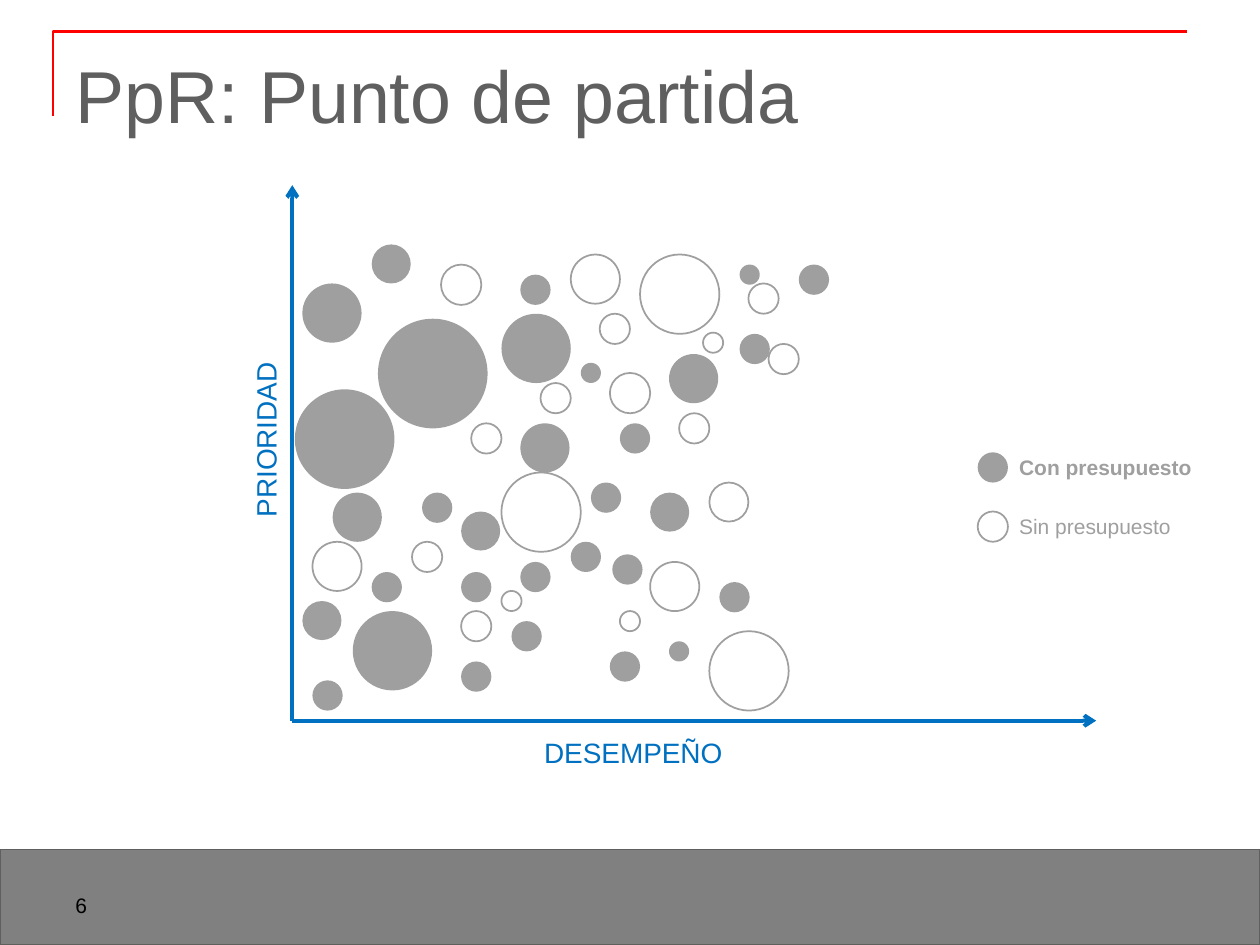
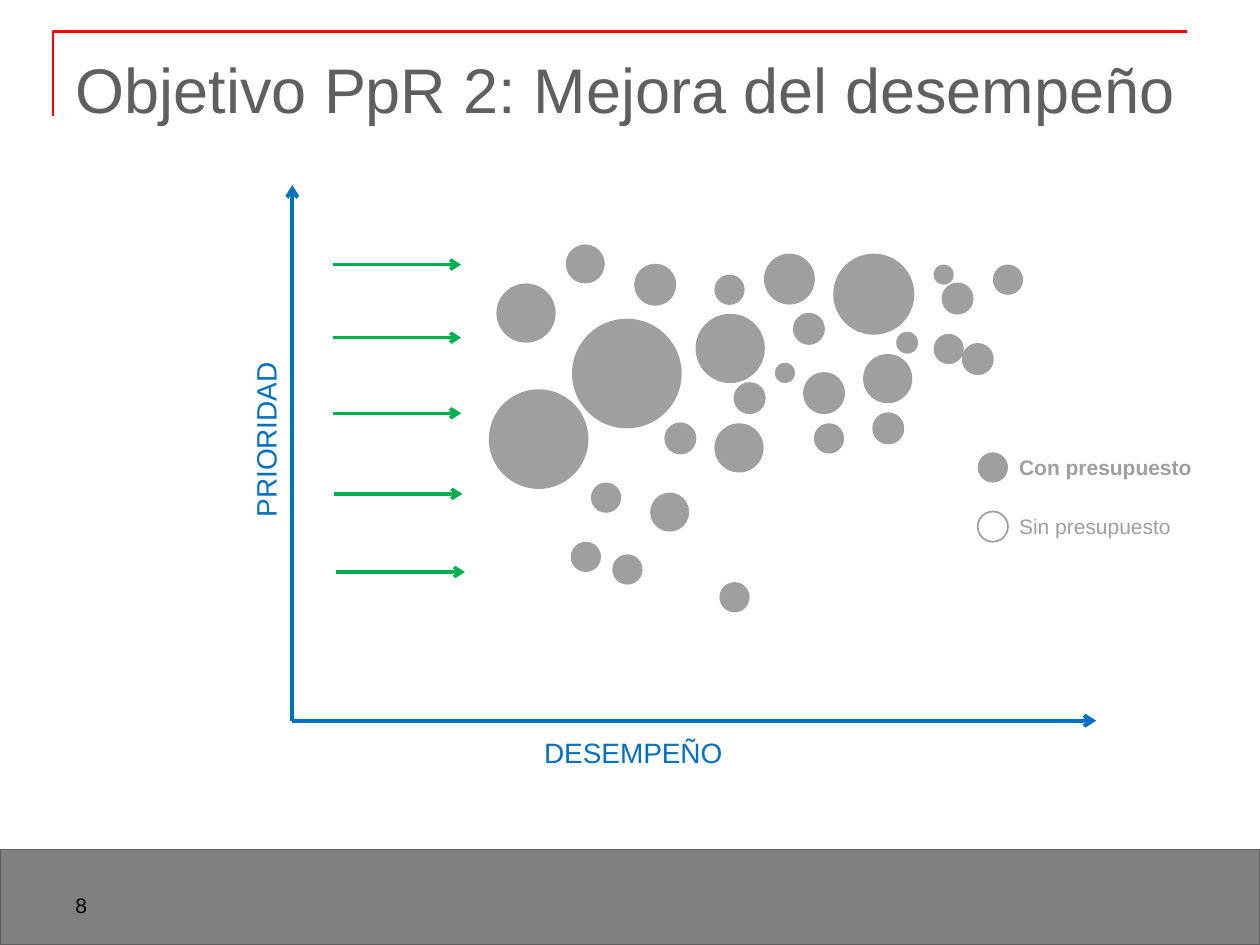
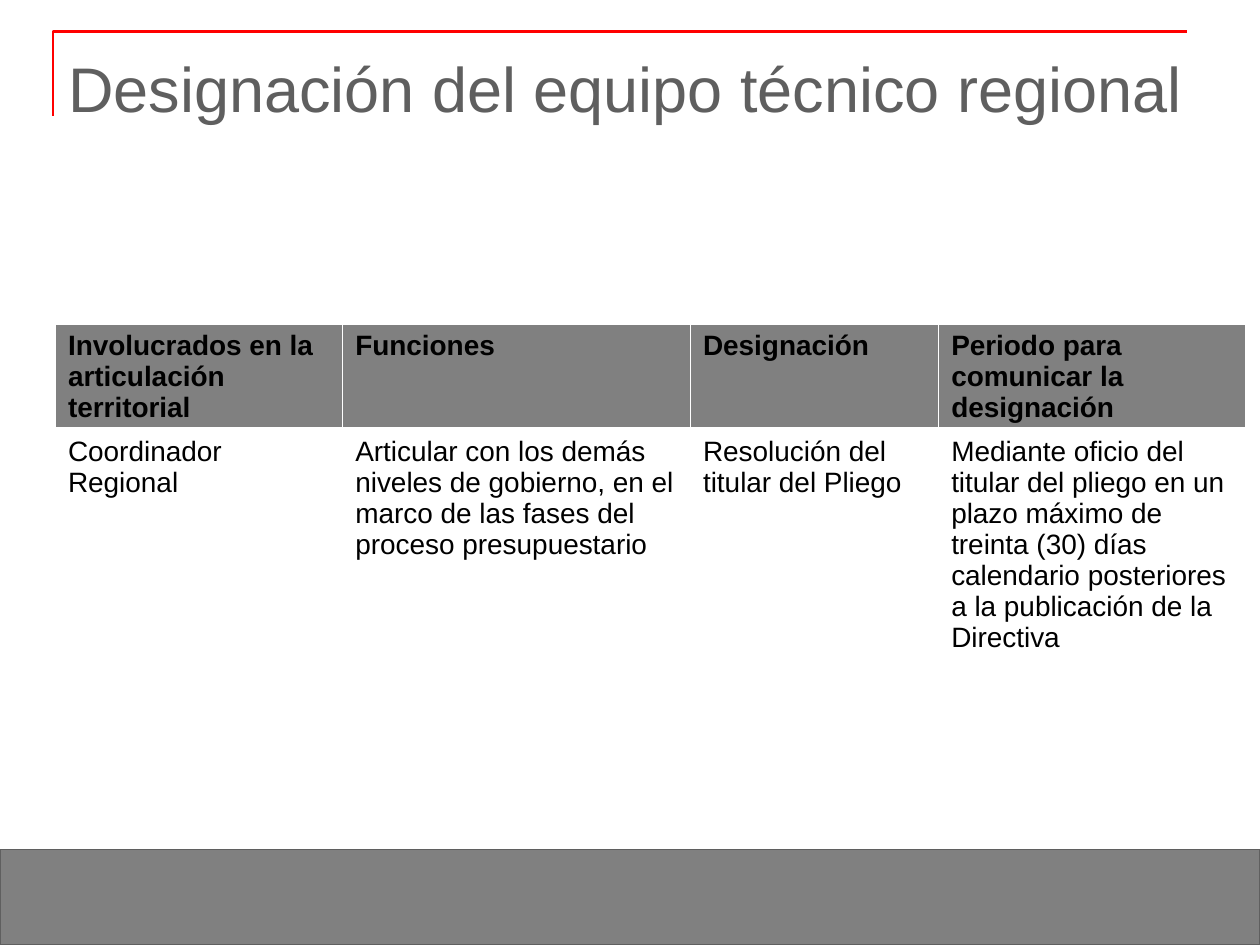
"""Build three slides on budgeting by results: two bubble maps and a table."""
from dataclasses import dataclass

from pptx import Presentation
from pptx import util as u
from pptx.dml.color import RGBColor
from pptx.enum import shapes, text
from pptx.oxml import parse_xml
from pptx.oxml.ns import nsdecls, qn

PX = u.Inches(1) // 100
PAGE_WIDTH, PAGE_HEIGHT = 1000, 750
SHIFT = 154

FUNDED_PRIORITY = [
    (295, 194, 31), (531, 281, 39), (461, 288, 16), (300, 253, 87), (413, 218, 24),
    (240, 225, 47), (234, 309, 79), (587, 265, 24), (413, 336, 39), (398, 249, 55),
    (587, 210, 16), (634, 210, 24), (492, 336, 24),
]
FUNDED_KEPT = [
    (486, 440, 24), (516, 391, 31), (571, 462, 24), (469, 383, 24), (453, 430, 24),
]
FUNDED_DROPPED = [
    (264, 391, 39), (366, 525, 24), (406, 493, 24), (335, 391, 24), (413, 446, 24),
    (531, 509, 16), (280, 485, 63), (366, 454, 24), (295, 454, 24), (366, 406, 31),
    (240, 477, 31), (248, 540, 24), (484, 517, 24),
]
UNFUNDED_PRIORITY = [
    (453, 202, 39), (476, 249, 24), (374, 336, 24), (594, 225, 24), (558, 264, 16),
    (508, 202, 63), (610, 273, 24), (539, 328, 24), (350, 210, 32), (484, 296, 32),
    (429, 304, 24),
]
UNFUNDED_DROPPED = [
    (248, 430, 39), (327, 430, 24), (492, 485, 16), (563, 501, 63), (516, 446, 39),
    (366, 485, 24), (398, 469, 16), (398, 375, 63), (563, 383, 31),
]
IMPROVEMENT_ARROWS = [(264, 210), (264, 268), (264, 328), (265, 392), (267, 454)]

TEAM_COLUMNS = [228, 276, 197, 244]
TEAM_ROWS = [83, 204]
TEAM = [
    ["Involucrados en la articulación territorial", "Funciones", "Designación",
     "Periodo para\ncomunicar la designación"],
    ["Coordinador Regional",
     "Articular con los demás niveles de gobierno, en el marco de las fases del "
     "proceso presupuestario",
     "Resolución del titular del Pliego",
     "Mediante oficio del titular del pliego en un plazo máximo de treinta (30) días "
     "calendario posteriores a la publicación de la Directiva"],
]


@dataclass(frozen=True)
class Theme:
    """Colours, font and type sizes."""
    font: str = "Arial"
    title: str = "5F5F5F"
    band: str = "808080"
    frame: str = "FF0000"
    axis: str = "0070C0"
    bubble: str = "9F9F9F"
    arrow: str = "00B050"
    ink: str = "000000"
    paper: str = "FFFFFF"
    title_size: int = 36
    label_size: int = 16
    small_size: int = 12


def px(*lengths):
    """Turn whole px into EMU."""
    return [u.Emu(length * PX) for length in lengths]


def write(frame, words, *, font, size, color, bold=False):
    """Fill a text frame with left-aligned paragraphs, one for each line of words."""
    for index, line in enumerate(words.split("\n")):
        para = frame.add_paragraph() if index else frame.paragraphs[0]
        para.alignment = text.PP_ALIGN.LEFT
        span = para.add_run()
        span.text = line
        span.font.name, span.font.size, span.font.bold = font, u.Pt(size), bold
        span.font.color.rgb = RGBColor.from_string(color)


class Deck:
    """Holds the style and the current slide, and draws each kind of element."""

    def __init__(self, theme):
        """Open an empty presentation."""
        self.theme = theme
        self.deck = Presentation()
        self.deck.slide_width, self.deck.slide_height = px(PAGE_WIDTH, PAGE_HEIGHT)
        self.page = None

    def new_page(self, title, size=None, at=(50, 30, 900, 69), number=None):
        """Add a slide with its title, band, corner frame and number."""
        theme = self.theme
        self.page = self.deck.slides.add_slide(self.deck.slide_layouts[5])
        box = self.page.shapes.title
        box.left, box.top, box.width, box.height = px(*at)
        frame = box.text_frame
        frame.auto_size, frame.word_wrap = text.MSO_AUTO_SIZE.NONE, True
        frame.vertical_anchor = text.MSO_ANCHOR.TOP
        frame.margin_top, = px(10)
        write(frame, title, font=theme.font, size=size or theme.title_size, color=theme.title)
        self.shape(shapes.MSO_SHAPE.RECTANGLE, (0, 674, PAGE_WIDTH, 76),
                   fill=theme.band, line=theme.title, weight=0.75)
        self.corner([(42, 92), (42, 25), (942, 25)])
        if number:
            self.label(number, (50, 683, 233, 50), size=theme.small_size, color=theme.ink,
                       anchor=text.MSO_ANCHOR.BOTTOM)

    def paint(self, shape, fill=None, line=None, weight=1):
        """Set the fill and outline of a shape."""
        shape.shadow.inherit = False
        if fill:
            shape.fill.solid()
            shape.fill.fore_color.rgb = RGBColor.from_string(fill)
        else:
            shape.fill.background()
        if line:
            shape.line.color.rgb = RGBColor.from_string(line)
            shape.line.width = u.Pt(weight)
        else:
            shape.line.fill.background()

    def shape(self, kind, at, **look):
        """Add a preset shape."""
        self.paint(self.page.shapes.add_shape(kind, *px(*at)), **look)

    def corner(self, points):
        """Add the open corner line around the title."""
        builder = self.page.shapes.build_freeform(*points[0], scale=PX)
        builder.add_line_segments(points[1:], close=False)
        self.paint(builder.convert_to_shape(), line=self.theme.frame, weight=1.5)

    def label(self, words, at, *, size, color, bold=False, turn=0, anchor=text.MSO_ANCHOR.TOP):
        """Add a text box."""
        box = self.page.shapes.add_textbox(*px(*at))
        box.rotation = turn
        box.text_frame.word_wrap = True
        box.text_frame.vertical_anchor = anchor
        write(box.text_frame, words, font=self.theme.font, size=size, color=color, bold=bold)

    def arrow(self, start, end, color, weight):
        """Add a straight line with an arrowhead at its end."""
        line = self.page.shapes.add_connector(
            shapes.MSO_CONNECTOR.STRAIGHT, *px(*start, *end))
        line.line.color.rgb = RGBColor.from_string(color)
        line.line.width = u.Pt(weight)
        properties = line._element.spPr
        properties.find(qn("a:ln")).append(
            parse_xml(f'<a:tailEnd {nsdecls("a")} type="arrow"/>'))
        properties.append(parse_xml(f'<a:effectLst {nsdecls("a")}/>'))

    def bubbles(self, places, shift=0, **look):
        """Add circles given as left, top and diameter."""
        for left, top, size in places:
            self.shape(shapes.MSO_SHAPE.OVAL, (left + shift, top, size, size), **look)

    def bubble_map(self):
        """Add the axes, their names and the legend."""
        theme = self.theme
        for end in [(232, 147), (870, 572)]:
            self.arrow((232, 572), end, theme.axis, 2.25)
        self.label("PRIORIDAD", (133, 324, 156, 37), size=theme.label_size,
                   color=theme.axis, turn=270)
        self.label("DESEMPEÑO", (422, 579, 173, 37), size=theme.label_size, color=theme.axis)
        legend = [("Con presupuesto", 359, {"fill": theme.bubble}, True),
                  ("Sin presupuesto", 406, {"line": theme.bubble}, False)]
        for words, top, look, bold in legend:
            self.bubbles([(776, top, 24)], **look)
            self.label(words, (799, top - 3, 170, 30), size=theme.small_size,
                       color=theme.bubble, bold=bold)

    def border(self, cell, weights):
        """Give a cell paper-coloured borders, with weights for left, right, top, bottom."""
        properties = cell._tc.get_or_add_tcPr()
        for index, (side, weight) in enumerate(zip("LRTB", weights)):
            properties.insert(index, parse_xml(
                f'<a:ln{side} {nsdecls("a")} w="{u.Pt(weight)}"><a:solidFill>'
                f'<a:srgbClr val="{self.theme.paper}"/></a:solidFill></a:ln{side}>'))

    def table(self, rows, corner, widths, heights):
        """Add a table with a filled heading row."""
        theme = self.theme
        size = (sum(widths), sum(heights))
        grid = self.page.shapes.add_table(
            len(rows), len(widths), *px(*corner, *size)).table
        for column, width in zip(grid.columns, px(*widths)):
            column.width = width
        for row, height in zip(grid.rows, px(*heights)):
            row.height = height
        for row, entries in enumerate(rows):
            heading = row == 0
            for column, words in enumerate(entries):
                cell = grid.cell(row, column)
                if heading:
                    cell.fill.solid()
                    cell.fill.fore_color.rgb = RGBColor.from_string(theme.band)
                else:
                    cell.fill.background()
                self.border(cell, (1, 1, 1 if heading else 3, 3 if heading else 1))
                write(cell.text_frame, words, font=theme.font, size=theme.label_size,
                      color=theme.ink, bold=heading)


def main():
    """Build and save the deck."""
    theme = Theme()
    deck = Deck(theme)
    gray = theme.bubble

    deck.new_page("PpR: Punto de partida", size=42, number="6")
    deck.bubble_map()
    deck.bubbles(FUNDED_PRIORITY + FUNDED_KEPT + FUNDED_DROPPED, fill=gray)
    deck.bubbles(UNFUNDED_PRIORITY + UNFUNDED_DROPPED, line=gray)

    deck.new_page("Objetivo PpR 2: Mejora del desempeño", number="8")
    deck.bubble_map()
    deck.bubbles(FUNDED_PRIORITY, SHIFT, fill=gray)
    deck.bubbles(FUNDED_KEPT, fill=gray)
    deck.bubbles(UNFUNDED_PRIORITY, SHIFT, fill=gray, line=gray)
    for left, top in IMPROVEMENT_ARROWS:
        deck.arrow((left, top), (left + 102, top), theme.arrow, 2)

    deck.new_page("Designación del equipo técnico regional", at=(44, 29, 928, 87))
    deck.table(TEAM, (44, 257), TEAM_COLUMNS, TEAM_ROWS)

    deck.deck.save("out.pptx")


if __name__ == "__main__":
    main()
